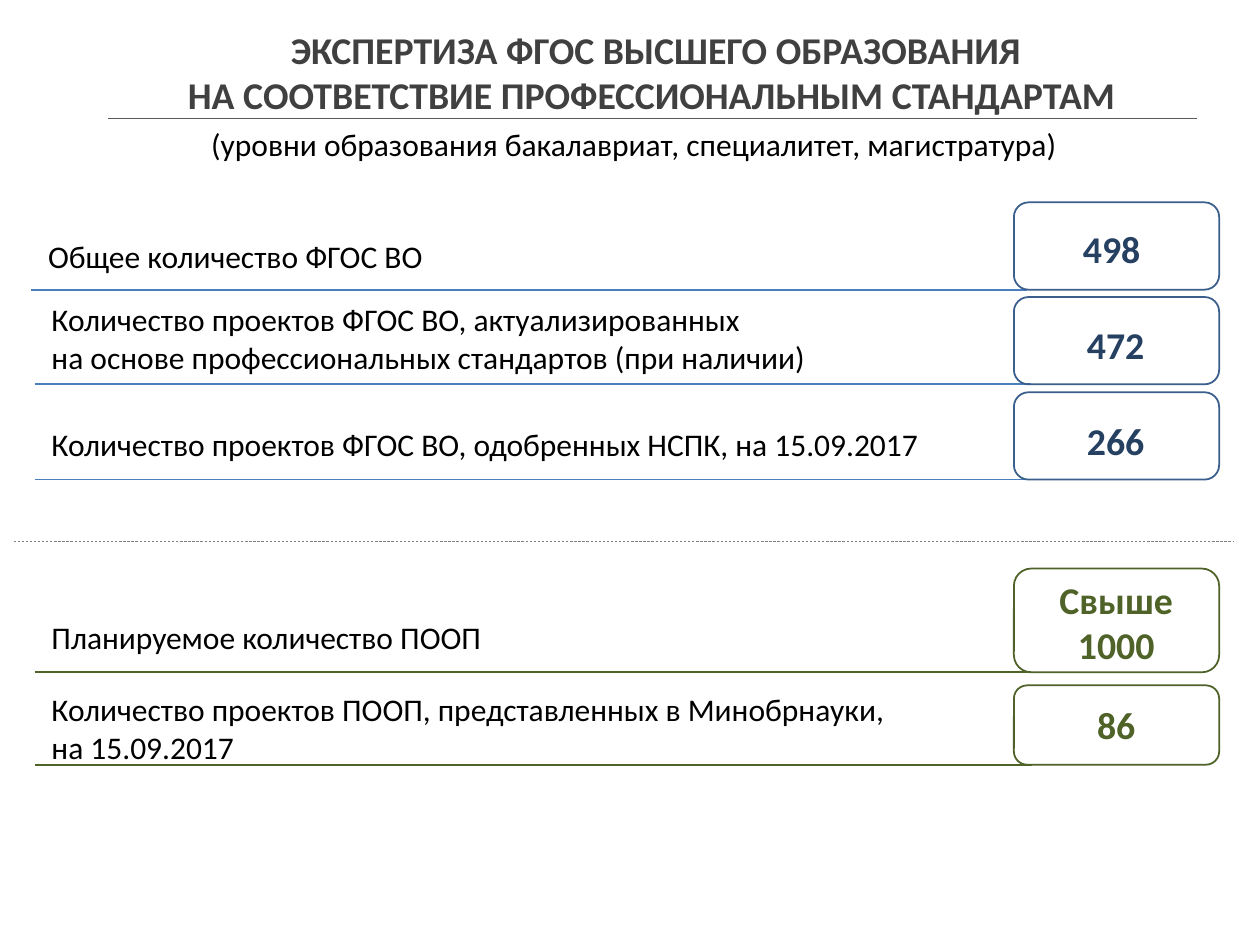
from pptx import Presentation
from pptx.dml.color import RGBColor
from pptx.enum.dml import MSO_LINE
from pptx.enum.shapes import MSO_CONNECTOR, MSO_SHAPE
from pptx.enum.text import MSO_ANCHOR, MSO_AUTO_SIZE, PP_ALIGN
from pptx.util import Inches, Pt
from lxml import etree

STRAIGHT = MSO_CONNECTOR.STRAIGHT
ROUNDED = MSO_SHAPE.ROUNDED_RECTANGLE
CENTER, LEFT = PP_ALIGN.CENTER, PP_ALIGN.LEFT
FONT = "Calibri"
DRAWING = "http://schemas.openxmlformats.org/drawingml/2006/main"
COLORS = {
    "title": "404040", "text": "000000", "rule": "595959", "divider": "808080",
    "navy": "254061", "blue_box": "3A5F8C", "blue_line": "4B7EBC", "green": "4F6228",
}


def add_line(x1, x2, y, color, width):
    line = slide.shapes.add_connector(STRAIGHT, Inches(x1), Inches(y), Inches(x2), Inches(y))
    line.line.color.rgb = RGBColor.from_string(COLORS[color])
    line.line.width = Pt(width)
    etree.SubElement(line._element.spPr, f"{{{DRAWING}}}effectLst")
    return line


def add_text(left, top, width, height, lines, size, color, bold, alignment):
    box = slide.shapes.add_textbox(Inches(left), Inches(top), Inches(width), Inches(height))
    frame = box.text_frame
    frame.word_wrap = True
    frame.auto_size = MSO_AUTO_SIZE.SHAPE_TO_FIT_TEXT
    for index, text in enumerate(lines):
        paragraph = frame.add_paragraph() if index else frame.paragraphs[0]
        paragraph.alignment = alignment
        run = paragraph.add_run()
        run.text = text
        run.font.name = FONT
        run.font.size = Pt(size)
        run.font.bold = bold
        run.font.color.rgb = RGBColor.from_string(COLORS[color])


presentation = Presentation()
presentation.slide_width = Inches(22.22)
presentation.slide_height = Inches(16.67)
slide = presentation.slides.add_slide(presentation.slide_layouts[5])

title = slide.shapes.title
title.left, title.top = Inches(2.03), Inches(0.56)
title.width, title.height = Inches(19.08), Inches(1.41)
title_frame = title.text_frame
title_frame.auto_size = MSO_AUTO_SIZE.NONE
title_frame.word_wrap = True
title_frame.vertical_anchor = MSO_ANCHOR.MIDDLE
title_frame.margin_left = title_frame.margin_right = Inches(0.22)
title_frame.margin_top = title_frame.margin_bottom = Inches(0.11)
title_paragraph = title_frame.paragraphs[0]
title_paragraph.alignment = CENTER
title_lines = ["ЭКСПЕРТИЗА ФГОС ВЫСШЕГО ОБРАЗОВАНИЯ",
               "НА СООТВЕТСТВИЕ ПРОФЕССИОНАЛЬНЫМ СТАНДАРТАМ "]
for index, text in enumerate(title_lines):
    if index:
        title_paragraph.add_line_break()
    run = title_paragraph.add_run()
    run.text = text
    run.font.name = FONT
    run.font.size = Pt(48)
    run.font.bold = True
    run.font.color.rgb = RGBColor.from_string(COLORS["title"])

add_line(1.91, 21.11, 2.08, "rule", 0.75)
add_text(2.45, 2.16, 17.45, 0.77,
         ["(уровни образования бакалавриат, специалитет, магистратура)"],
         40, "text", False, CENTER)

BLUE = ("navy", "blue_box", "blue_line")
GREEN = ("green", "green", "green")
rows = [
    (3.57, 1.54, 0.54, 0.75, 4.13, ["Общее количество ФГОС ВО"],
     18.12, 3.94, 0.91, "498", BLUE),
    (5.24, 1.54, 0.61, 0.81, 5.24, ["Количество проектов ФГОС ВО, актуализированных",
                                    "на основе профессиональных стандартов (при наличии)"],
     18.19, 5.63, 0.91, "472", BLUE),
    (6.92, 1.54, 0.61, 0.81, 7.45,
     ["Количество проектов ФГОС ВО, одобренных НСПК, на 15.09.2017"],
     18.19, 7.32, 0.91, "266", BLUE),
    (10.03, 1.83, 0.61, 0.81, 10.85, ["Планируемое количество ПООП"],
     18.2, 10.12, 1.72, "Свыше 1000", GREEN),
    (12.09, 1.4, 0.62, 0.81, 12.12, ["Количество проектов ПООП, представленных в Минобрнауки,",
                                     "на 15.09.2017"],
     18.2, 12.33, 0.91, "86", GREEN),
]
for (box_top, box_height, line_left, label_left, label_top, label,
     value_left, value_top, value_height, value, palette) in rows:
    value_color, box_color, line_color = palette
    add_line(line_left, line_left + 17.58, box_top + box_height, line_color, 2.25)
    box = slide.shapes.add_shape(ROUNDED, Inches(17.88), Inches(box_top),
                                 Inches(3.62), Inches(box_height))
    box.shadow.inherit = False
    box.fill.background()
    box.line.color.rgb = RGBColor.from_string(COLORS[box_color])
    box.line.width = Pt(2.25)
    add_text(label_left, label_top, 15.74, 0.09 + 0.68 * len(label), label,
             40, "text", False, LEFT)
    add_text(value_left, value_top, 2.97, value_height, [value], 48, value_color, True, CENTER)

divider = add_line(0.24, 21.76, 9.55, "divider", 0.75)
divider.line.dash_style = MSO_LINE.DASH

presentation.save("out.pptx")
